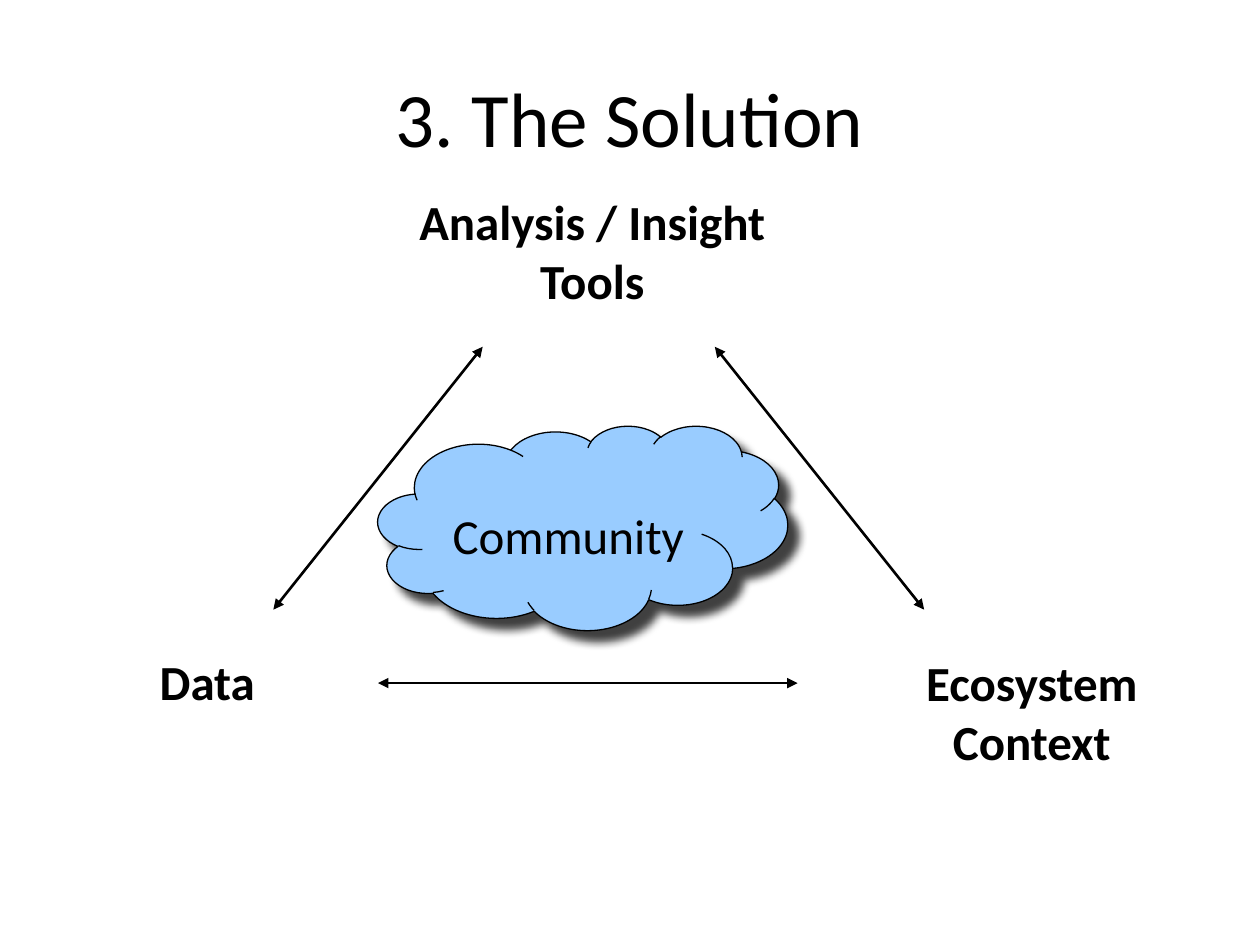
"""Build the slide "3. The Solution": three linked themes around a community cloud."""
from lxml.etree import SubElement
from pptx import Presentation
from pptx.dml.color import RGBColor
from pptx.enum.shapes import MSO_CONNECTOR as Connector, MSO_SHAPE as Preset
from pptx.enum.text import MSO_ANCHOR as Anchor, PP_ALIGN as Align
from pptx.oxml.ns import qn
from pptx.util import Cm, Pt

COLORS = {"ink": "000000", "cloud": "99CCFF", "paper": "FFFFFF"}
FONT = "Calibri"
TITLE = ("3. The Solution", (1.27, 0.76, 22.86, 3.18))
THEMES = [
    (["Analysis / Insight", "Tools"], (7.62, 3.73, 8.64, 2.62), Align.CENTER),
    (["Ecosystem", "Context"], (17.93, 13.03, 5.74, 2.62), Align.CENTER),
    (["Data"], (2.97, 13, 2.67, 2.03), Align.LEFT),
]
CLOUD = ("Community", (7.62, 8.58, 8.26, 4.12))
CLOUD_TEXT_TOP = 0.99
AXIS = 12.07
SIDE_LOW, SIDE_HIGH = (5.51, 12.29), (9.73, 6.99)
BASE_LEFT, BASE_RIGHT = (7.62, 13.77), (16.08, 13.77)
SHADOW = {"blurRad": Pt(5), "dist": Pt(8.5), "dir": 45 * 60000, "algn": "ctr", "rotWithShape": 0}


def color(name):
    return RGBColor.from_string(COLORS[name])


def mirror(point):
    return 2 * AXIS - point[0], point[1]


def write(shape, lines, size=28, bold=False, align=Align.CENTER, anchor=Anchor.TOP, wrap=True):
    frame = shape.text_frame
    frame.word_wrap = wrap
    frame.vertical_anchor = anchor
    frame.text = "\n".join(lines)
    for paragraph in frame.paragraphs:
        paragraph.alignment = align
        font = paragraph.font
        font.name, font.size, font.bold = FONT, Pt(size), bold
        font.color.rgb = color("ink")


def add_text(slide, lines, box, **style):
    shape = slide.shapes.add_textbox(*map(Cm, box))
    write(shape, lines, **style)


def add_cloud(slide, text, box):
    shape = slide.shapes.add_shape(Preset.CLOUD, *map(Cm, box))
    shape.fill.solid()
    shape.fill.fore_color.rgb = color("cloud")
    shape.line.color.rgb = color("ink")
    shape.line.width = Pt(0.75)
    shape.shadow.inherit = False
    effects = shape._element.spPr.find(qn("a:effectLst"))
    shadow = SubElement(effects, qn("a:outerShdw"), {key: str(value) for key, value in SHADOW.items()})
    tint = SubElement(shadow, qn("a:srgbClr"), val=COLORS["ink"])
    SubElement(tint, qn("a:alpha"), val="75000")
    write(shape, [text])
    shape.text_frame.margin_top = Cm(CLOUD_TEXT_TOP)


def add_double_arrow(slide, start, end):
    arrow = slide.shapes.add_connector(Connector.STRAIGHT, *map(Cm, start + end))
    arrow.line.color.rgb = color("ink")
    arrow.line.width = Pt(1.5)
    for tag in ("a:headEnd", "a:tailEnd"):
        SubElement(arrow.line._get_or_add_ln(), qn(tag), type="triangle")
    SubElement(arrow._element.spPr, qn("a:effectLst"))


def main():
    presentation = Presentation()
    presentation.slide_width, presentation.slide_height = Cm(25.4), Cm(19.05)
    slide = presentation.slides.add_slide(presentation.slide_layouts[6])
    slide.background.fill.solid()
    slide.background.fill.fore_color.rgb = color("paper")
    title, title_box = TITLE
    add_text(slide, [title], title_box, size=44, anchor=Anchor.MIDDLE)
    add_cloud(slide, *CLOUD)
    for lines, box, align in THEMES:
        add_text(slide, lines, box, bold=True, align=align, wrap=False)
    add_double_arrow(slide, SIDE_LOW, SIDE_HIGH)
    add_double_arrow(slide, BASE_LEFT, BASE_RIGHT)
    add_double_arrow(slide, mirror(SIDE_LOW), mirror(SIDE_HIGH))
    presentation.save("out.pptx")


if __name__ == "__main__":
    main()
